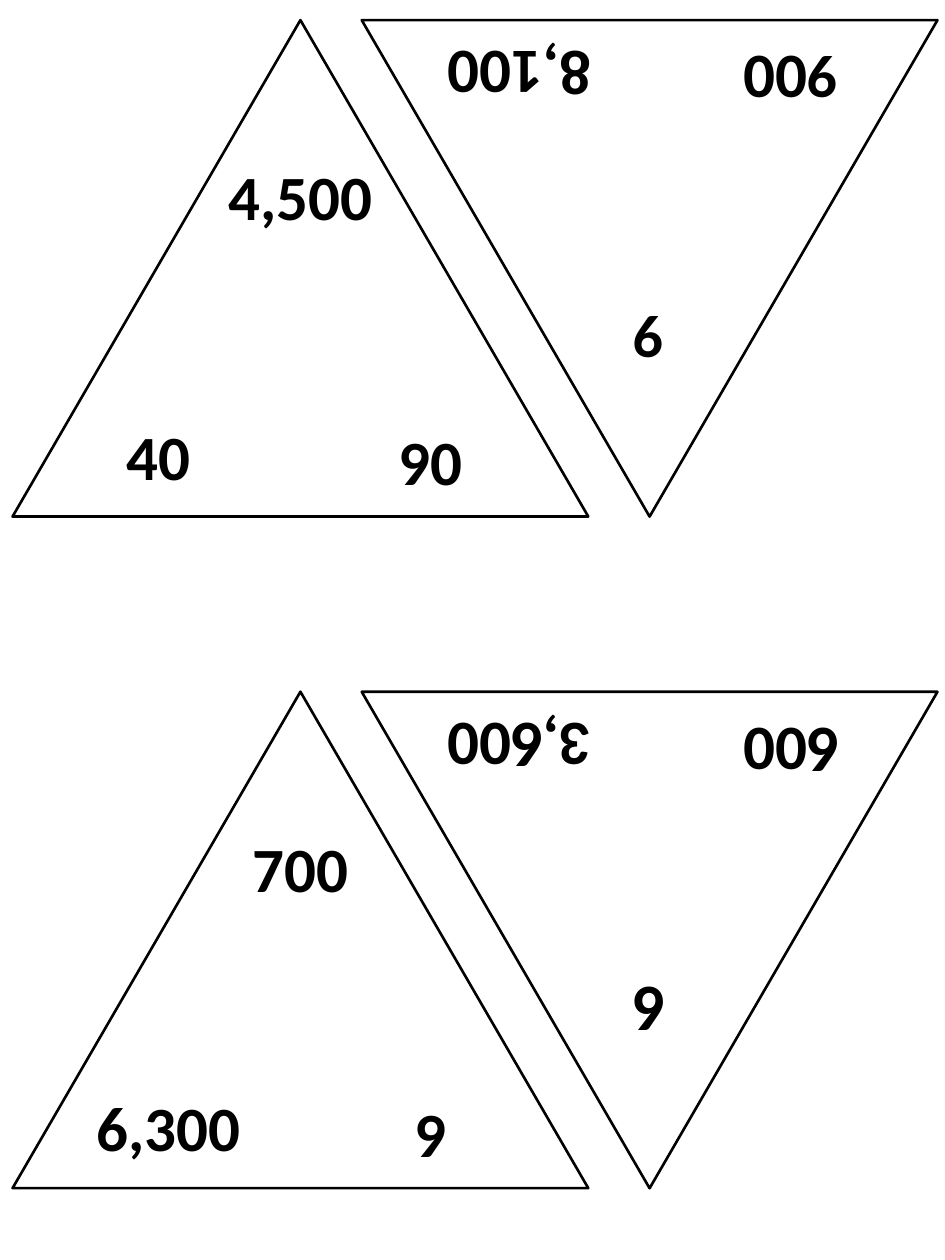
from dataclasses import dataclass

from pptx import Presentation
from pptx.dml.color import RGBColor
from pptx.enum import shapes, text
from pptx.util import Pt


@dataclass(frozen=True)
class Theme:
    ink: RGBColor = RGBColor(0, 0, 0)
    paper: RGBColor = RGBColor(255, 255, 255)
    font: str = "Calibri"
    size: float = 36
    line: float = 1.5


@dataclass(frozen=True)
class Slot:
    x: float
    anchor: float
    top: float
    width: float


THEME = Theme()
CARD_W, CARD_H = 329, 283.7
LEFT, TOP = 7.2, 11.5
COLUMN_STEP, ROW_STEP = 199.5, 383.8
LABEL_H, WIDE_LABEL = 51, 107.3
APEX = Slot(CARD_W / 2, 0.5, 75, 90.7)
BASE_LEFT = Slot(35.4, 0, 223.3, 95.8)
BASE_RIGHT = Slot(185.2, 0, 226.3, WIDE_LABEL)
SLOTS = (APEX, BASE_LEFT, BASE_RIGHT)
CARD_ROWS = (
    (("4,500", "40", "90"), ("9", "900", "8,100")),
    (("700", "6,300", "9"), ("6", "600", "3,600")),
)


def add_text(group, content, box, *, rotation=0, size=THEME.size, bold=True,
             color=THEME.ink, align=text.PP_ALIGN.CENTER):
    s = group.shapes.add_textbox(*map(Pt, box))
    s.rotation = rotation
    tf = s.text_frame
    tf.word_wrap = True
    tf.auto_size = text.MSO_AUTO_SIZE.SHAPE_TO_FIT_TEXT
    p = tf.paragraphs[0]
    p.alignment = align
    r = p.add_run()
    r.text = content
    r.font.name = THEME.font
    r.font.size = Pt(size)
    r.font.bold = bold
    r.font.color.rgb = color


def add_triangle(group, box, rotation):
    s = group.shapes.add_shape(
        shapes.MSO_SHAPE.ISOSCELES_TRIANGLE, *map(Pt, box))
    s.rotation = rotation
    s.shadow.inherit = False
    s.fill.solid()
    s.fill.fore_color.rgb = THEME.paper
    s.line.color.rgb = THEME.ink
    s.line.width = Pt(THEME.line)


def label_box(slot, content, left, top, flipped):
    width = WIDE_LABEL if "," in content else slot.width
    x = slot.x - slot.anchor * width
    y = slot.top
    if flipped:
        x = CARD_W - x - width
        y = CARD_H - y - LABEL_H
    return left + x, top + y, width, LABEL_H


def add_card(slide, left, top, labels, flipped):
    group = slide.shapes.add_group_shape()
    rotation = 180 if flipped else 0
    add_triangle(group, (left, top, CARD_W, CARD_H), rotation)
    for slot, content in zip(SLOTS, labels):
        box = label_box(slot, content, left, top, flipped)
        add_text(group, content, box, rotation=rotation)


def main():
    prs = Presentation()
    prs.slide_width, prs.slide_height = Pt(540), Pt(720)
    slide = prs.slides.add_slide(prs.slide_layouts[6])
    for row, cards in enumerate(CARD_ROWS):
        for column, labels in enumerate(cards):
            add_card(slide, LEFT + column * COLUMN_STEP,
                     TOP + row * ROW_STEP, labels, flipped=column == 1)
    prs.save("out.pptx")


if __name__ == "__main__":
    main()
